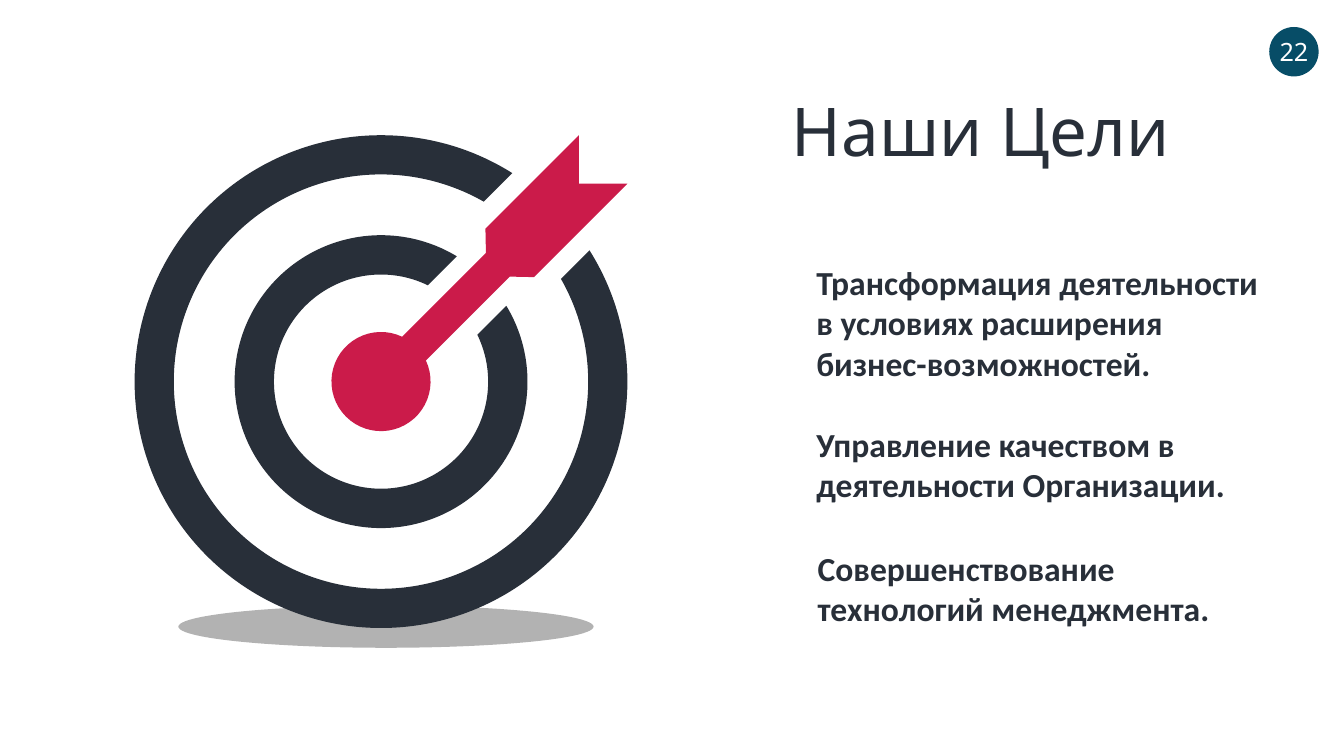
from math import asin, cos, pi, radians, sin, tan

from lxml.etree import SubElement
from pptx import Presentation
from pptx.dml.color import RGBColor
from pptx.enum.shapes import MSO_SHAPE as Shape
from pptx.enum.text import MSO_ANCHOR as Anchor, MSO_AUTO_SIZE as Auto, PP_ALIGN as Align
from pptx.oxml.ns import qn
from pptx.util import Pt

COLORS = {"dark": "282F39", "red": "CB1B4A", "teal": "074D67",
          "white": "FFFFFF", "black": "000000"}
AXIS = radians(45)  # direction of the arrow

GOALS = [
    (0, 0, 94.3, "Трансформация деятельности в условиях расширения бизнес-возможностей."),
    (0, 115.6, 65.5, "Управление качеством в деятельности Организации."),
    (0.9, 204.3, 65.5, "Совершенствование технологий менеджмента."),
]


def write(shape, text, size=24, font="Calibri", color="dark", bold=False,
          align=Align.LEFT, anchor=Anchor.TOP, wrap=True, fit=Auto.SHAPE_TO_FIT_TEXT):
    frame = shape.text_frame
    frame.auto_size = fit
    frame.word_wrap = wrap
    frame.vertical_anchor = anchor
    para = frame.paragraphs[0]
    para.alignment = align
    run = para.add_run()
    run.text = text
    run.font.size = Pt(size)
    run.font.name = font
    run.font.bold = bold
    run.font.color.rgb = RGBColor.from_string(COLORS[color])


def paint(shape, color, alpha=None):
    shape.shadow.inherit = False
    shape.line.fill.background()
    shape.fill.solid()
    shape.fill.fore_color.rgb = RGBColor.from_string(COLORS[color])
    if alpha is not None:
        tint = shape.fill._xPr.find(qn("a:solidFill"))[0]
        SubElement(tint, qn("a:alpha"), val=str(alpha * 1000))


def oval(slide, box, color, alpha=None):
    shape = slide.shapes.add_shape(Shape.OVAL, *map(Pt, box))
    paint(shape, color, alpha)
    return shape


def arc(radius, gap, steps):
    """Curve points along and across the axis, round a gap of the given half width."""
    edge = asin(gap / radius)
    turn = (2 * pi - 2 * edge) / steps
    pull = 4 / 3 * tan(turn / 4)
    points = []
    for i in range(steps + 1):
        c, s = cos(edge + i * turn), sin(edge + i * turn)
        trio = [(radius * (c - k * s), radius * (s + k * c)) for k in (-pull, 0, pull)]
        points += trio
    return points[1:-1]


def outline(slide, center, parts, color):
    """Draw one closed shape from parts, each a list of points and whether it curves."""
    c, s = cos(AXIS), sin(AXIS)
    spots, sizes = [], []
    for points, curved in parts:
        spots += [(Pt(center[0] + u * c - v * s), Pt(center[1] - u * s - v * c))
                  for u, v in points]
        sizes += [1] + [3] * (len(points) // 3) if curved else [1] * len(points)
    form = slide.shapes.build_freeform(*spots[0])
    form.add_line_segments(spots[1:], close=True)
    shape = form.convert_to_shape()
    # Join each three points of an arc into one curve
    track = next(shape._element.iter(qn("a:path")))
    lines = iter(track.findall(qn("a:lnTo")))
    for size in sizes[1:]:
        first = next(lines)
        if size == 3:
            first.tag = qn("a:cubicBezTo")
            for extra in (next(lines), next(lines)):
                first.append(extra[0])
                track.remove(extra)
    paint(shape, color)


def target(slide, left, top, size):
    center = left + size / 2, top + size / 2
    # Ground shadow
    oval(slide, (left + 31.2, top + size - 16.1, 296.6, 30.2), "black", alpha=30)
    # Rings, open where the arrow passes
    rings = [(size / 2, 5, 148, 24, 39), (104.6, 6, 76.5, 12, 25)]
    for outer, few, inner, many, gap in rings:
        parts = [(arc(outer, gap, few), True), (arc(inner, gap, many)[::-1], True)]
        outline(slide, center, parts, "dark")
    # Arrow with its round hub
    side = [(118, 12), (130, 24.5), (224.5, 24.5)]
    below = [(u, -v) for u, v in side]
    parts = [(arc(35.4, 12, 6), True), (below + [(200, 0)] + side[::-1], False)]
    outline(slide, center, parts, "red")


def heading(slide, left, top, width, height):
    title = slide.shapes.title
    title.left, title.top, title.width, title.height = map(Pt, (left, top, width, height))
    write(title, "Наши Цели", size=48, font="Noto Sans", align=Align.CENTER)


def goals(slide, left, top, width):
    for dx, dy, height, text in GOALS:
        box = slide.shapes.add_textbox(*map(Pt, (left + dx, top + dy, width, height)))
        write(box, text, bold=True)


def badge(slide, left, top, size):
    disc = oval(slide, (left, top, size, size), "teal")
    write(disc, "22", size=18, font="Noto Sans", color="white", align=Align.CENTER,
          anchor=Anchor.MIDDLE, wrap=False, fit=Auto.NONE)


def main():
    deck = Presentation()
    deck.slide_width, deck.slide_height = Pt(960), Pt(540)
    slide = deck.slides.add_slide(deck.slide_layouts[5])
    heading(slide, 554, 60, 293, 65.5)
    target(slide, 96.2, 96.6, 352)
    goals(slide, 576, 183.5, 330.5)
    badge(slide, 906.6, 19.3, 35.3)
    deck.save("out.pptx")


if __name__ == "__main__":
    main()
